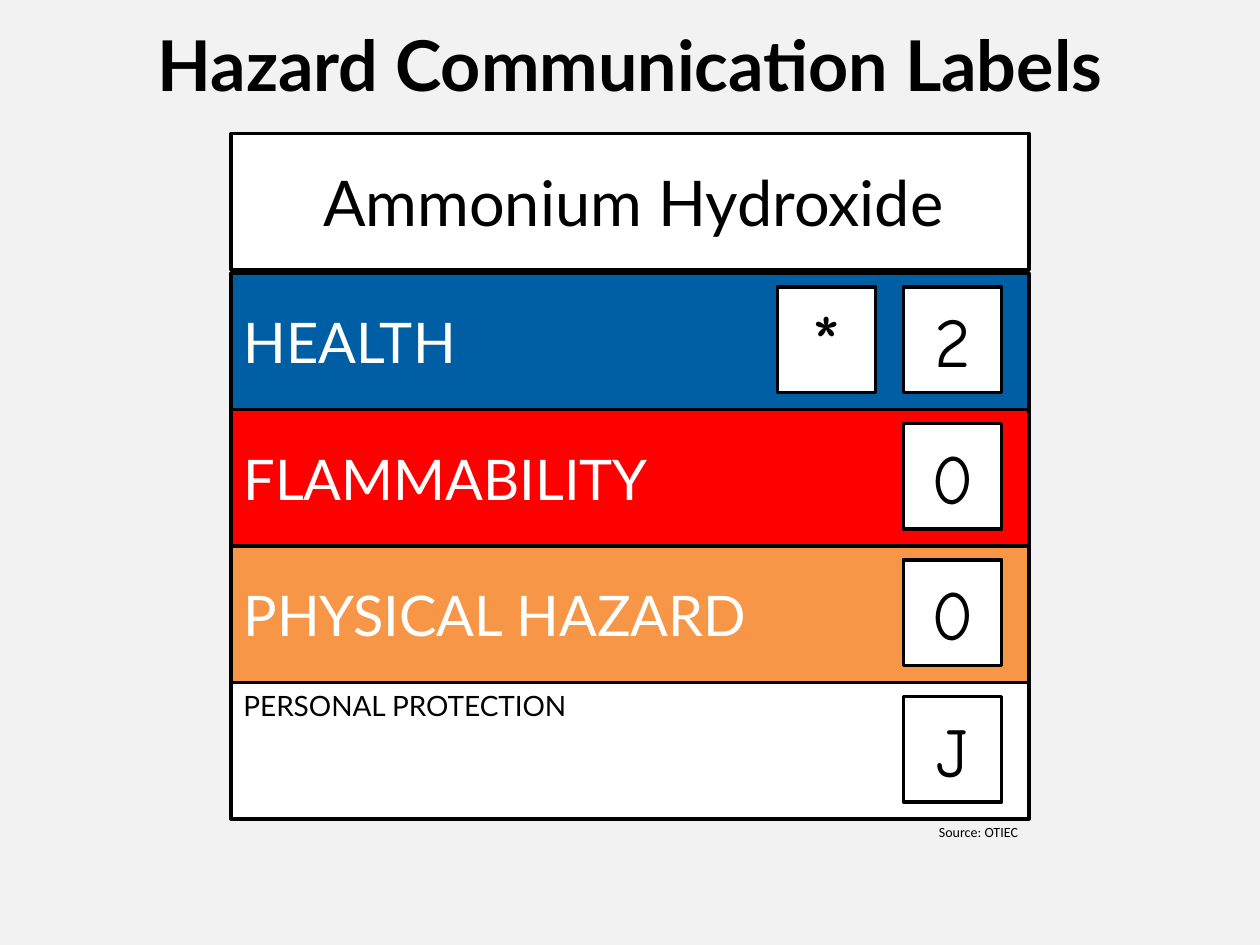
from pptx import Presentation
from pptx import util as u
from pptx.dml.color import RGBColor
from pptx.enum import shapes, text

BLACK, WHITE = "000000", "FFFFFF"
LEFT, CENTER, RIGHT = text.PP_ALIGN.LEFT, text.PP_ALIGN.CENTER, text.PP_ALIGN.RIGHT
TOP, MIDDLE = text.MSO_ANCHOR.TOP, text.MSO_ANCHOR.MIDDLE

LABEL_LEFT, LABEL_WIDTH = 5.5 / 3, 19 / 3
NAME_TOP, ROWS_TOP = 1.06, 6.5 / 3
ROW_HEIGHT = 6.5 / 6
RATING_LEFT, RATING_WIDTH, RATING_HEIGHT = 7.17, 0.78, 0.84
RATING_INSET = 0.11


def color(value):
    return RGBColor.from_string(value)


def write(tf, content, size=32, font="Lato", fill=BLACK, bold=False,
          align=LEFT, anchor=MIDDLE, inset=0.1):
    tf.word_wrap = True
    tf.vertical_anchor = anchor
    tf.margin_left = u.Inches(inset)
    p = tf.paragraphs[0]
    p.alignment = align
    r = p.add_run()
    r.text = content
    r.font.size = u.Pt(size)
    r.font.name = font
    r.font.bold = bold
    r.font.color.rgb = color(fill)


class LabelSlide:
    """Holds the slide, the label group and the shared outline style."""

    def __init__(self, prs, background):
        self.s = prs.slides.add_slide(prs.slide_layouts[5])
        fill = self.s.background.fill
        fill.solid()
        fill.fore_color.rgb = color(background)
        self.line_width = u.Pt(2)
        self.label = None

    def title(self, content, x, y, w, h):
        sp = self.s.shapes.title
        sp.left, sp.top, sp.width, sp.height = map(u.Inches, (x, y, w, h))
        write(sp.text_frame, content, size=40, bold=True, align=CENTER, anchor=TOP)

    def caption(self, content, x, y, w, h, **style):
        sp = self.s.shapes.add_textbox(*map(u.Inches, (x, y, w, h)))
        write(sp.text_frame, content, size=8, anchor=TOP, **style)

    def start_label(self):
        self.label = self.s.shapes.add_group_shape()

    def box(self, content, x, y, w, h, background=WHITE, **style):
        sp = self.label.shapes.add_shape(
            shapes.MSO_SHAPE.RECTANGLE, *map(u.Inches, (x, y, w, h)))
        sp.shadow.inherit = False
        sp.fill.solid()
        sp.fill.fore_color.rgb = color(background)
        sp.line.color.rgb = color(BLACK)
        sp.line.width = self.line_width
        write(sp.text_frame, content, **style)

    def band(self, content, y, **style):
        self.box(content, LABEL_LEFT, y, LABEL_WIDTH, ROW_HEIGHT, **style)

    def rating(self, content, row_top, x=RATING_LEFT, size=40):
        self.box(content, x, row_top + RATING_INSET, RATING_WIDTH, RATING_HEIGHT,
                 size=size, font="Comic Neue", align=CENTER)


def main():
    prs = Presentation()
    prs.slide_width, prs.slide_height = u.Inches(10), u.Inches(7.5)

    slide = LabelSlide(prs, "F2F2F2")
    slide.title("Hazard Communication Labels", 0.25, 0.12, 9.5, 0.92)
    slide.caption("Source: OTIEC", 7.01, 6.49, 1.17, 0.24,
                  font="Calibri", align=RIGHT)

    slide.start_label()
    rows = [
        ("HEALTH", "2", dict(background="005EA4", fill=WHITE)),
        ("FLAMMABILITY", "0", dict(background="FF0000", fill=WHITE)),
        ("PHYSICAL HAZARD", "0", dict(background="F79646", fill=WHITE)),
        ("PERSONAL PROTECTION", "J", dict(size=16, anchor=TOP)),
    ]
    for i, (hazard, rating, style) in enumerate(rows):
        y = ROWS_TOP + i * ROW_HEIGHT
        slide.band(hazard, y, **style)
        slide.rating(rating, y)
    slide.rating("*", ROWS_TOP, x=RATING_LEFT - 1, size=44)
    slide.band("Ammonium Hydroxide", NAME_TOP, size=36, align=CENTER, inset=0.15)

    prs.save("out.pptx")


if __name__ == "__main__":
    main()
